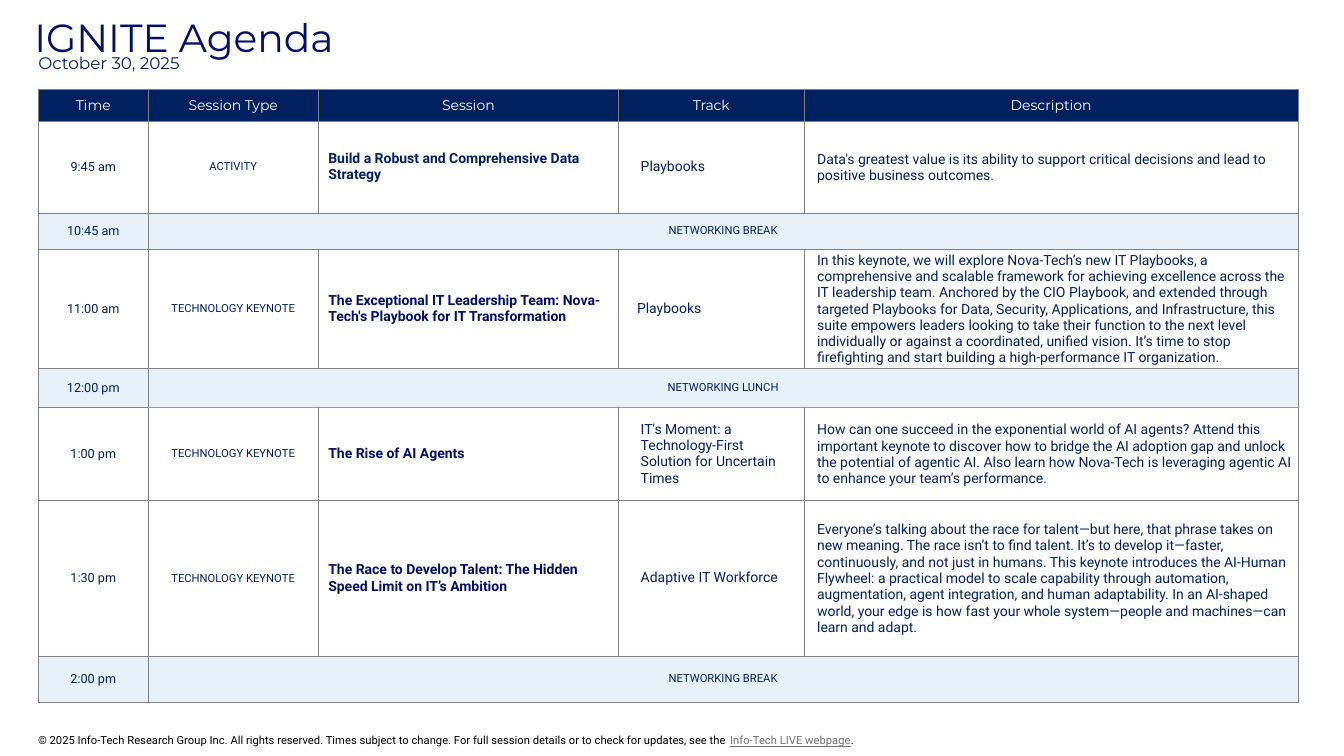
"""Build the one-slide IGNITE conference agenda."""
from lxml import etree
from pptx import Presentation
from pptx.dml.color import RGBColor
from pptx.enum.text import MSO_ANCHOR, PP_ALIGN
from pptx.oxml.ns import qn
from pptx.util import Pt

CENTER, LEFT = PP_ALIGN.CENTER, PP_ALIGN.LEFT
MIDDLE = MSO_ANCHOR.MIDDLE
HEADING_FONT, BODY_FONT = "Montserrat", "Roboto"
COLORS = {
    "navy": "002060",
    "indigo": "000F69",
    "white": "FFFFFF",
    "break": "CEE4F5",
    "grid": "808080",
    "lunch_rule": "99999A",
    "black": "000000",
    "link": "717171",
}
COLUMN_WIDTHS = [78.5, 121.5, 214.5, 132.5, 353]
ROW_HEIGHTS = [22.5, 65.5, 26, 85, 28, 66.5, 111, 33]
HEADINGS = ["Time", "Session Type", "Session", "Track", "Description"]
LUNCH = "NETWORKING LUNCH"
AGENDA = [
    ("9:45 am", "ACTIVITY", "Build a Robust and Comprehensive Data Strategy", "Playbooks",
     "Data's greatest value is its ability to support critical decisions and lead to "
     "positive business outcomes."),
    ("10:45 am", "NETWORKING BREAK"),
    ("11:00 am", "TECHNOLOGY KEYNOTE",
     "The Exceptional IT Leadership Team: Nova-Tech's Playbook for IT Transformation",
     "Playbooks",
     "In this keynote, we will explore Nova-Tech’s new IT Playbooks, a comprehensive and "
     "scalable framework for achieving excellence across the IT leadership team. Anchored by "
     "the CIO Playbook, and extended through targeted Playbooks for Data, Security, "
     "Applications, and Infrastructure, this suite empowers leaders looking to take their "
     "function to the next level individually or against a coordinated, unified vision. It’s "
     "time to stop firefighting and start building a high-performance IT organization."),
    ("12:00 pm", LUNCH),
    ("1:00 pm", "TECHNOLOGY KEYNOTE", "The Rise of AI Agents",
     "IT's Moment: a Technology-First Solution for Uncertain Times",
     "How can one succeed in the exponential world of AI agents? Attend this important keynote "
     "to discover how to bridge the AI adoption gap and unlock the potential of agentic AI. "
     "Also learn how Nova-Tech is leveraging agentic AI to enhance your team’s performance."),
    ("1:30 pm", "TECHNOLOGY KEYNOTE",
     "The Race to Develop Talent: The Hidden Speed Limit on IT’s Ambition",
     "Adaptive IT Workforce",
     "Everyone’s talking about the race for talent—but here, that phrase takes on new meaning. "
     "The race isn’t to find talent. It’s to develop it—faster, continuously, and not just in "
     "humans. This keynote introduces the AI-Human Flywheel: a practical model to scale "
     "capability through automation, augmentation, agent integration, and human adaptability. "
     "In an AI-shaped world, your edge is how fast your whole system—people and machines—can "
     "learn and adapt."),
    ("2:00 pm", "NETWORKING BREAK"),
]


def rgb(color):
    """Return the named colour."""
    return RGBColor.from_string(COLORS[color])


def set_font(paragraph, name, size, color=None, bold=False):
    """Set the font that a whole paragraph shares."""
    font = paragraph.font
    font.name, font.size, font.bold = name, Pt(size), bold
    if color:
        font.color.rgb = rgb(color)


def style_cell(cell, fill, alpha=100, top="grid", bottom="grid"):
    """Give a cell its fill and four borders."""
    cell.fill.solid()
    cell.fill.fore_color.rgb = rgb(fill)
    properties = cell._tc.get_or_add_tcPr()
    if alpha < 100:
        tint = properties.find(qn("a:solidFill")).find(qn("a:srgbClr"))
        etree.SubElement(tint, qn("a:alpha"), val=str(alpha * 1000))
    edges = {"a:lnL": "grid", "a:lnR": "grid", "a:lnT": top, "a:lnB": bottom}
    for position, (edge, color) in enumerate(edges.items()):
        width = Pt(0.5 if color == "grid" else 1)
        line = etree.Element(qn(edge), w=str(int(width)))
        paint = etree.SubElement(line, qn("a:solidFill"))
        etree.SubElement(paint, qn("a:srgbClr"), val=COLORS[color])
        properties.insert(position, line)


def write_cell(cell, text, size, font=BODY_FONT, color="navy", bold=False,
               align=CENTER, indent=0):
    """Write one paragraph, centred vertically, in a cell."""
    cell.vertical_anchor = MIDDLE
    paragraph = cell.text_frame.paragraphs[0]
    paragraph.text = text
    paragraph.alignment = align
    if indent:
        properties = paragraph._p.get_or_add_pPr()
        properties.set("marL", str(int(Pt(indent))))
        properties.set("indent", "0")
    set_font(paragraph, font, size, color, bold)


def write_session(cells, row, session):
    """Fill the session, track and description cells of a row."""
    title, track, description = session
    write_cell(cells[2], title, 10, color="navy" if row == 1 else "indigo",
               bold=True, align=LEFT)
    write_cell(cells[3], track, 10, align=LEFT, indent=6 if row == 3 else 8.64)
    write_cell(cells[4], description, 10, align=LEFT, indent=8.64)
    cells[4].margin_left = cells[4].margin_right = cells[4].margin_top = Pt(0.72)
    cells[4].margin_bottom = Pt(0)


def add_agenda(slide):
    """Add the agenda table with its headings, sessions and breaks."""
    frame = slide.shapes.add_table(len(ROW_HEIGHTS), len(COLUMN_WIDTHS), Pt(27.36), Pt(64.08),
                                   Pt(sum(COLUMN_WIDTHS)), Pt(sum(ROW_HEIGHTS)))
    table = frame.table
    table.first_row = table.horz_banding = False
    for column, width in zip(table.columns, COLUMN_WIDTHS):
        column.width = Pt(width)
    for row, height in zip(table.rows, ROW_HEIGHTS):
        row.height = Pt(height)

    for cell, heading in zip(table.rows[0].cells, HEADINGS):
        style_cell(cell, "navy")
        write_cell(cell, heading, 10, font=HEADING_FONT, color="white")
        cell.margin_top = cell.margin_bottom = Pt(0)

    above = ""
    for row, (time, kind, *session) in enumerate(AGENDA, 1):
        cells = list(table.rows[row].cells)
        for column, cell in enumerate(cells):
            style_cell(cell, "white" if session else "break", 50,
                       top="lunch_rule" if column and above == LUNCH else "grid",
                       bottom="lunch_rule" if column and kind == LUNCH else "grid")
        write_cell(cells[0], time, 9)
        write_cell(cells[1], kind, 8)
        if session:
            write_session(cells, row, session)
        else:
            cells[1].merge(cells[-1])
        above = kind


def add_text(slide, left, top, width, height, margin=None):
    """Add a wrapping text box and return its first paragraph."""
    frame = slide.shapes.add_textbox(Pt(left), Pt(top), Pt(width), Pt(height)).text_frame
    frame.word_wrap = True
    if margin is not None:
        frame.margin_left = frame.margin_right = Pt(margin)
        frame.margin_top = frame.margin_bottom = Pt(margin)
    return frame.paragraphs[0]


def add_heading(slide, text, box, size, color, spacing):
    """Add a line of heading text without margins."""
    heading = add_text(slide, *box, margin=0)
    heading.text = text
    heading.line_spacing = spacing
    set_font(heading, HEADING_FONT, size, color)


def add_footer(slide):
    """Add the copyright line with its underlined page name."""
    footer = add_text(slide, 20.16, 520.56, 888.48, 17.28)
    set_font(footer, BODY_FONT, 8)
    for text, color in [
        ("© 2025 Info-Tech Research Group Inc. All rights reserved. Times subject to change. "
         "For full session details or to check for updates, see the ", "black"),
        ("Info-Tech LIVE webpage", "link"),
        (".", "black"),
    ]:
        part = footer.add_run()
        part.text = text
        part.font.color.rgb = rgb(color)
        part.font.underline = color == "link"


def main():
    """Build and save the agenda slide."""
    deck = Presentation()
    deck.slide_width, deck.slide_height = Pt(960), Pt(540)
    slide = deck.slides.add_slide(deck.slide_layouts[6])
    add_agenda(slide)
    add_heading(slide, "IGNITE Agenda", (24.48, 6.48, 558, 33.12), 28, "indigo", 1.1)
    add_heading(slide, "October 30, 2025", (27.36, 39.6, 418.32, 37.44), 12, "navy", 0.9)
    add_footer(slide)
    deck.save("out.pptx")


if __name__ == "__main__":
    main()
